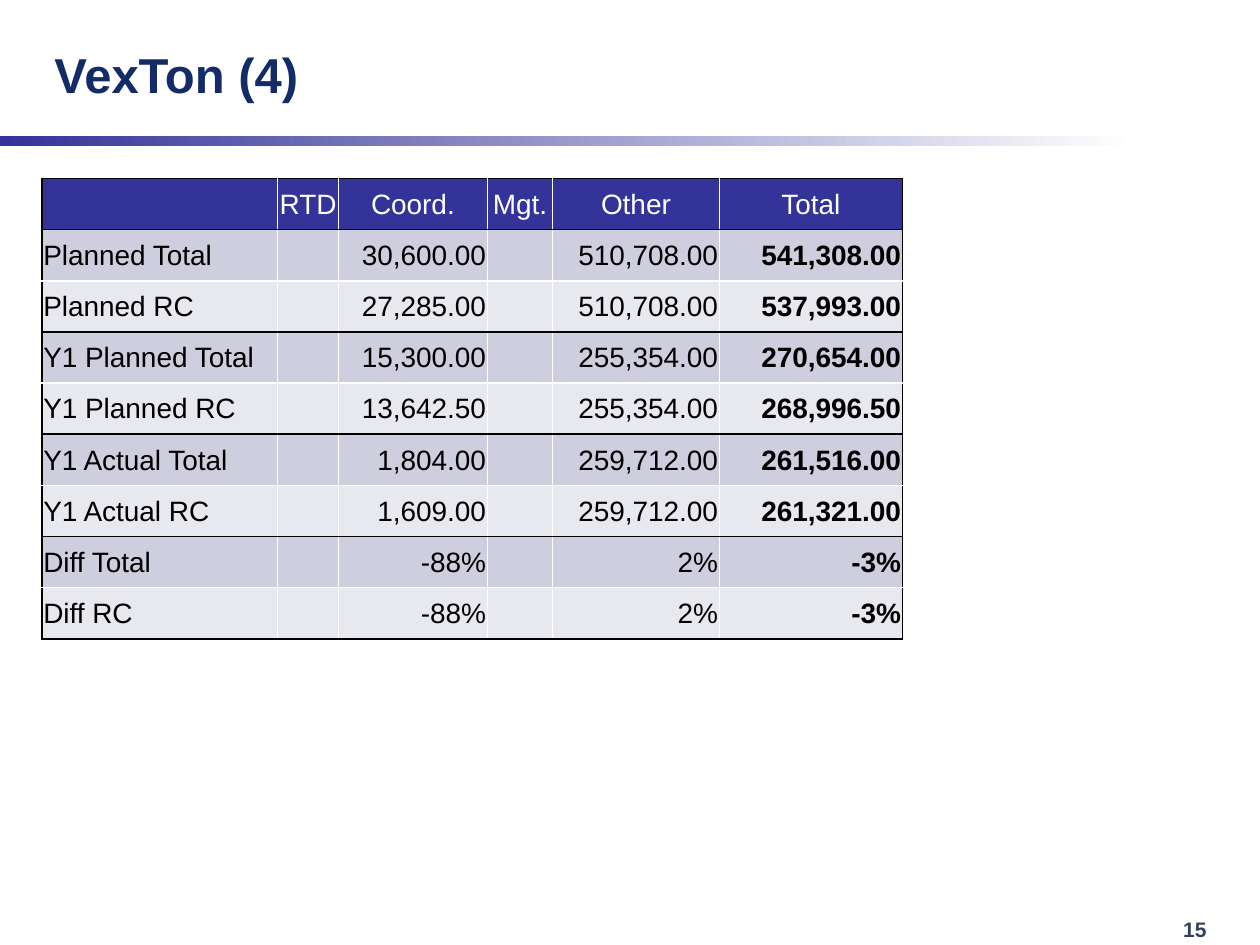
"""Build the partner budget slide with its planned and actual cost table."""
import lxml.etree
import pptx
import pptx.dml.color
import pptx.enum.shapes
import pptx.enum.text
import pptx.oxml.ns
import pptx.util

Pt = pptx.util.Pt
PP_ALIGN = pptx.enum.text.PP_ALIGN
MIDDLE = pptx.enum.text.MSO_ANCHOR.MIDDLE
RGB = pptx.dml.color.RGBColor.from_string
qn = pptx.oxml.ns.qn

COLORS = {
    "title": "132B66",
    "number": "32425D",
    "header": "333399",
    "odd": "CECEDE",
    "even": "E8E8EF",
    "white": "FFFFFF",
    "black": "000000",
}


def format_text(p, size, color, bold):
    for r in p.runs:
        r.font.name = "Arial"
        r.font.size = Pt(size)
        r.font.bold = bold
        r.font.color.rgb = RGB(COLORS[color])


def add_border(cell, side, color):
    ln = lxml.etree.Element(qn("a:" + side), w=str(Pt(1)))
    fill = lxml.etree.SubElement(ln, qn("a:solidFill"))
    lxml.etree.SubElement(fill, qn("a:srgbClr"), val=COLORS[color])
    return ln


prs = pptx.Presentation()
prs.slide_width = Pt(720)
prs.slide_height = Pt(540)
s = prs.slides.add_slide(prs.slide_layouts[6])

sp = s.shapes.add_shape(
    pptx.enum.shapes.MSO_SHAPE.RECTANGLE, Pt(0), Pt(77.75), Pt(720), Pt(6))
sp.shadow.inherit = False
sp.line.fill.background()
sp.fill.gradient()
sp.fill.gradient_angle = 0
for stop, position, color in zip(sp.fill.gradient_stops, (0, 0.9), ("header", "white")):
    stop.position = position
    stop.color.rgb = RGB(COLORS[color])

for text, box, size, color in (
    ("VexTon (4)", (24, 6, 510, 72), 28, "title"),
    ("15", (669, 520, 46, 21.6), 12, "number"),
):
    sp = s.shapes.add_textbox(*map(Pt, box))
    tf = sp.text_frame
    tf.word_wrap = True
    tf.vertical_anchor = MIDDLE
    tf.text = text
    format_text(tf.paragraphs[0], size, color, True)

rows = [
    ("", "RTD", "Coord.", "Mgt.", "Other", "Total"),
    ("Planned Total", "", "30,600.00", "", "510,708.00", "541,308.00"),
    ("Planned RC", "", "27,285.00", "", "510,708.00", "537,993.00"),
    ("Y1 Planned Total", "", "15,300.00", "", "255,354.00", "270,654.00"),
    ("Y1 Planned RC", "", "13,642.50", "", "255,354.00", "268,996.50"),
    ("Y1 Actual Total", "", "1,804.00", "", "259,712.00", "261,516.00"),
    ("Y1 Actual RC", "", "1,609.00", "", "259,712.00", "261,321.00"),
    ("Diff Total", "", "-88%", "", "2%", "-3%"),
    ("Diff RC", "", "-88%", "", "2%", "-3%"),
]
widths = (134.7, 34.8, 85, 37.4, 95.2, 104.6)
row_height = 29.23
last = len(widths) - 1

table = s.shapes.add_table(
    len(rows), len(widths), Pt(24), Pt(102), Pt(sum(widths)), Pt(row_height * len(rows))).table
for column, width in zip(table.columns, widths):
    column.width = Pt(width)

for i, row in enumerate(rows):
    table.rows[i].height = Pt(row_height)
    shade = "header" if i == 0 else "odd" if i % 2 else "even"
    for j, text in enumerate(row):
        cell = table.cell(i, j)
        cell.vertical_anchor = MIDDLE
        cell.margin_left = cell.margin_right = cell.margin_top = Pt(0.75)
        cell.margin_bottom = Pt(0)
        black_sides = {
            "lnL": j == 0,
            "lnR": j == last,
            "lnT": i == 0 or i % 2 == 1,
            "lnB": i % 2 == 0,
        }
        tcPr = cell._tc.get_or_add_tcPr()
        for side, is_black in black_sides.items():
            tcPr.append(add_border(cell, side, "black" if is_black else "white"))
        cell.fill.solid()
        cell.fill.fore_color.rgb = RGB(COLORS[shade])
        p = cell.text_frame.paragraphs[0]
        p.text = text
        if i == 0:
            p.alignment = PP_ALIGN.CENTER
        else:
            p.alignment = PP_ALIGN.RIGHT if j else PP_ALIGN.LEFT
        format_text(p, 16, "black" if i else "white", i > 0 and j == last)

prs.save("out.pptx")
